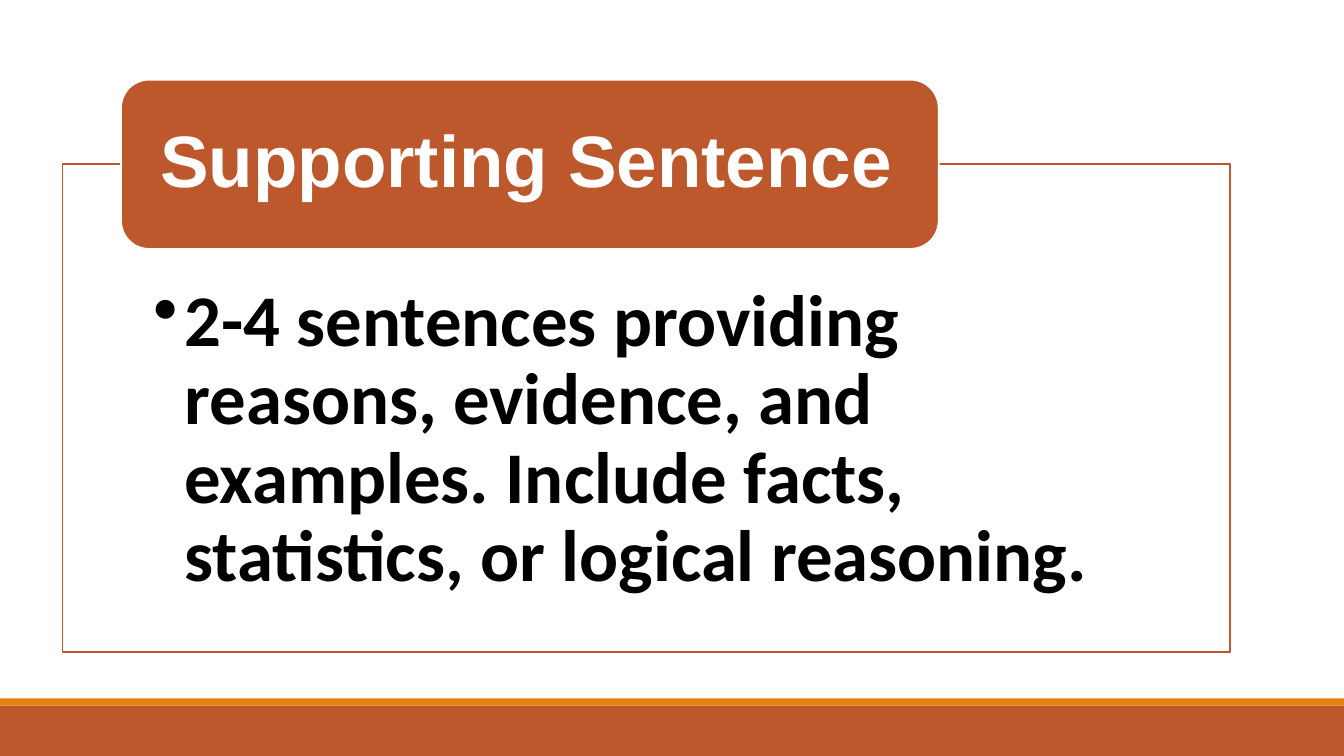
from lxml.etree import SubElement
from pptx import Presentation
from pptx.dml.color import RGBColor
from pptx.enum.shapes import MSO_SHAPE
from pptx.enum.text import MSO_ANCHOR, PP_ALIGN
from pptx.oxml.ns import qn
from pptx.util import Inches, Pt

COLORS = {"rust": "BD582C", "orange": "E48312", "white": "FFFFFF", "black": "000000"}


class SlideBuilder:
    """Holds the text and line style and the slide being drawn."""

    text_size = Pt(52)
    line_width = Pt(1.25)
    line_spacing = 0.9

    def __init__(self, slide):
        self.s = slide

    def color(self, name):
        return RGBColor.from_string(COLORS[name])

    def box(self, kind, left, top, width, height, fill, line=None, alpha=None):
        """Add a filled shape; alpha is its opacity in percent."""
        sp = self.s.shapes.add_shape(
            kind, Inches(left), Inches(top), Inches(width), Inches(height))
        sp.shadow.inherit = False
        sp.fill.solid()
        sp.fill.fore_color.rgb = self.color(fill)
        if alpha is not None:
            clr = sp._element.spPr.find(qn("a:solidFill"))[0]
            SubElement(clr, qn("a:alpha"), val=str(alpha * 1000))
        if line:
            sp.line.color.rgb = self.color(line)
            sp.line.width = self.line_width
        else:
            sp.line.fill.background()
        return sp

    def label(self, sp, text, font, color, insets, anchor, bullet_indent=None):
        """Put bold text in a shape; insets are left, top, right, bottom."""
        tf = sp.text_frame
        tf.word_wrap = True
        tf.vertical_anchor = anchor
        tf.margin_left, tf.margin_top, tf.margin_right, tf.margin_bottom = map(Inches, insets)
        tf.text = text
        p = tf.paragraphs[0]
        p.alignment = PP_ALIGN.LEFT
        p.line_spacing = self.line_spacing
        if bullet_indent:
            pPr = p._p.get_or_add_pPr()
            pPr.set("marL", str(Inches(bullet_indent)))
            pPr.set("indent", str(-Inches(bullet_indent)))
            SubElement(pPr, qn("a:buChar"), char="•")
        r = p.runs[0]
        r.font.name = font
        r.font.size = self.text_size
        r.font.bold = True
        r.font.color.rgb = self.color(color)


def main():
    prs = Presentation()
    prs.slide_width, prs.slide_height = Inches(13.33), Inches(7.5)
    b = SlideBuilder(prs.slides.add_slide(prs.slide_layouts[6]))

    b.box(MSO_SHAPE.RECTANGLE, 0, 7, 13.33, 0.5, "rust")
    b.box(MSO_SHAPE.RECTANGLE, 0, 6.93, 13.33, 0.07, "orange")

    body = b.box(MSO_SHAPE.RECTANGLE, 0.62, 1.63, 11.58, 4.84, "white", "rust", alpha=90)
    b.label(body,
            "2-4 sentences providing reasons, evidence, and examples. "
            "Include facts, statistics, or logical reasoning.",
            "Calibri", "black", (0.9, 1.18, 0.9, 0.4), MSO_ANCHOR.TOP, bullet_indent=0.31)

    title = b.box(MSO_SHAPE.ROUNDED_RECTANGLE, 1.2, 0.79, 8.11, 1.68, "rust", "white")
    b.label(title, "Supporting Sentence", "Arial", "white",
            (0.31, 0, 0.31, 0), MSO_ANCHOR.MIDDLE)

    prs.save("out.pptx")


if __name__ == "__main__":
    main()
